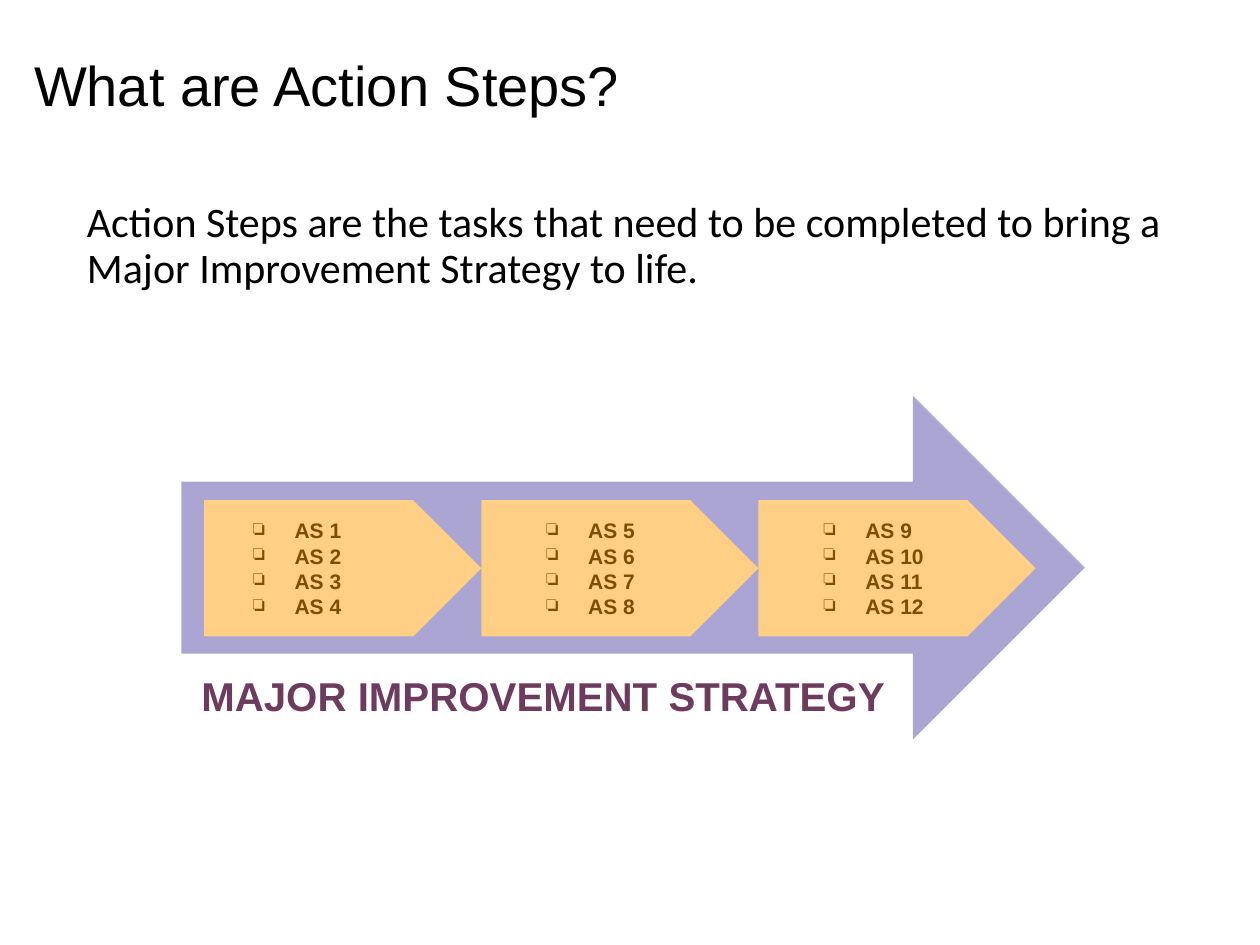
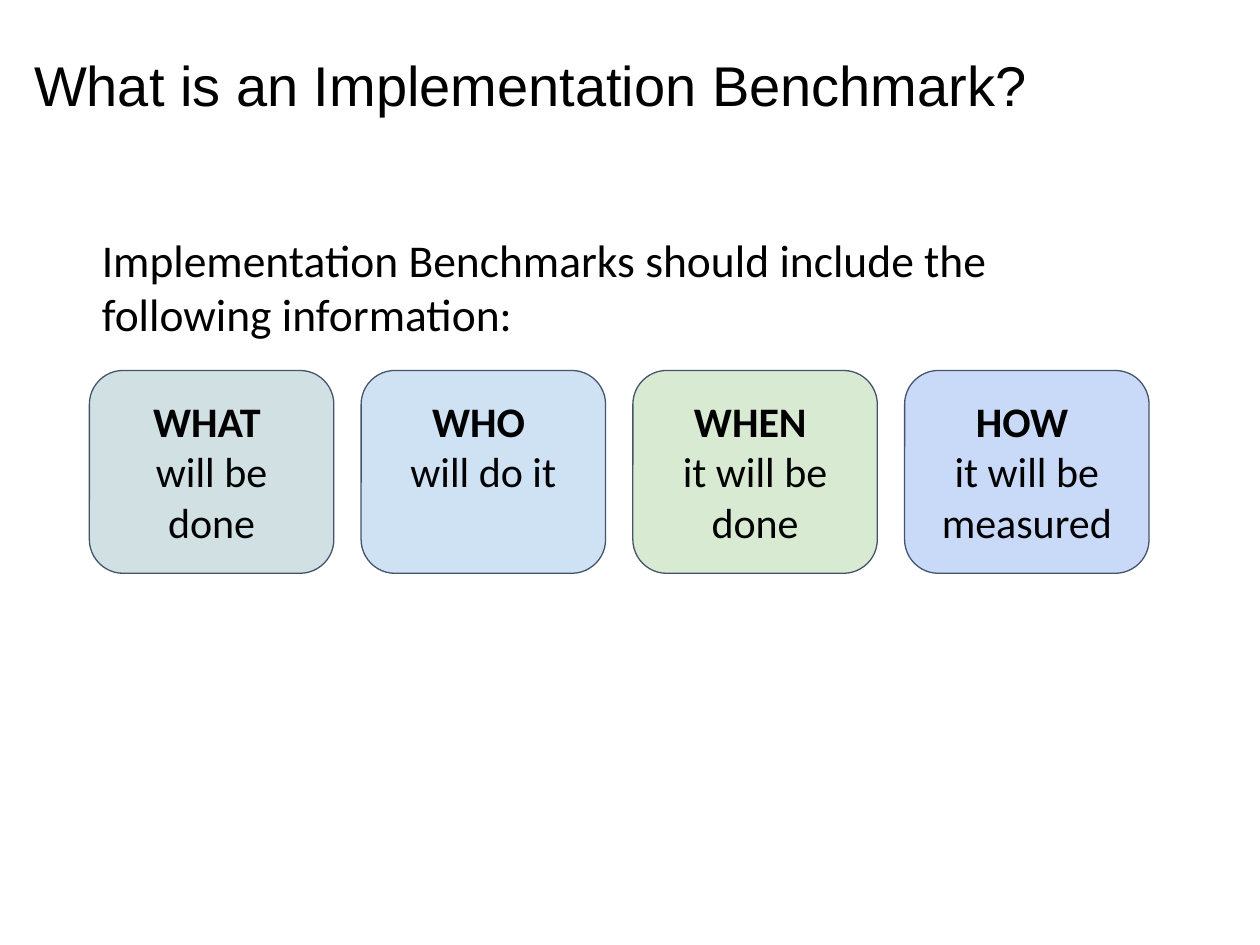
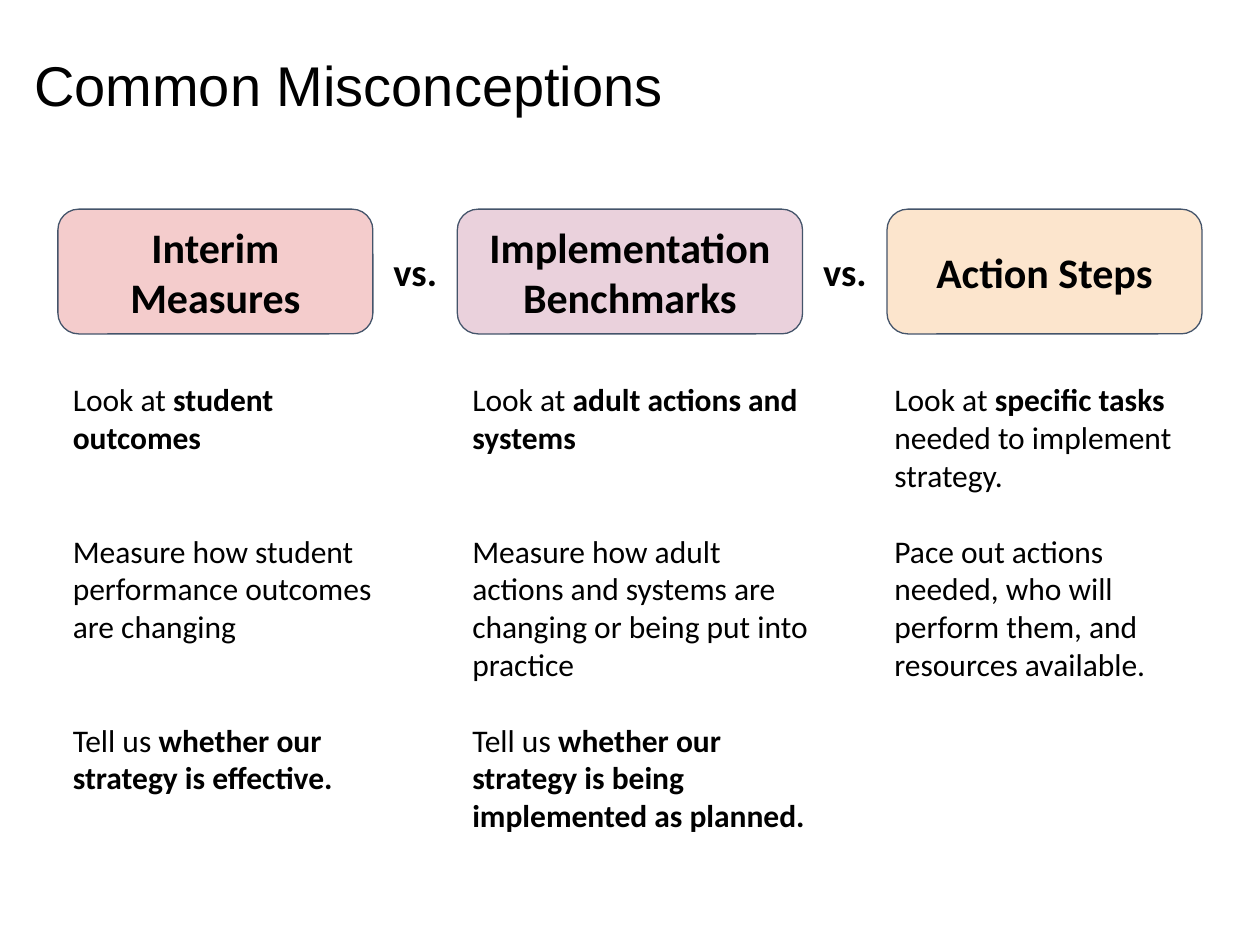
from lxml import etree
from pptx import Presentation
from pptx.dml.color import RGBColor
from pptx.enum import shapes, text
from pptx.oxml.ns import qn
from pptx.util import Inches, Pt

BLACK = "000000"
OUTLINE = "44546A"
ARROW = "AAA5D2"
STEP_FILL = "FECF85"
STEP_TEXT = "7C4D03"
STRATEGY_TEXT = "6D3B5D"
HEADING_FONT, BODY_FONT = "Arial", "Calibri"
TITLE_LAYOUT, TITLE_BODY_LAYOUT = 5, 1
SHAPE = shapes.MSO_SHAPE
ALIGN = text.PP_ALIGN
ANCHOR = text.MSO_ANCHOR


def rgb(color):
    return RGBColor.from_string(color)


def place(sp, left, top, width, height):
    sp.left, sp.top = Inches(left), Inches(top)
    sp.width, sp.height = Inches(width), Inches(height)


def set_margins(tf, margin):
    tf.margin_left = tf.margin_right = Inches(margin)
    tf.margin_top = tf.margin_bottom = Inches(margin)


def write(tf, paragraphs, size, font=BODY_FONT, color=BLACK, bold=False,
          align=ALIGN.LEFT):
    """Fill a frame; **marks** turn bold on and off, newlines break lines."""
    for i, content in enumerate(paragraphs):
        p = tf.paragraphs[0] if i == 0 else tf.add_paragraph()
        p.alignment = align
        for n, line in enumerate(content.split("\n")):
            if n:
                p.add_line_break()
            for k, part in enumerate(line.split("**")):
                if part:
                    r = p.add_run()
                    r.text = part
                    r.font.size, r.font.name = Pt(size), font
                    r.font.bold = bold or k % 2 == 1
                    r.font.color.rgb = rgb(color)


def set_bullet(p, char=None, left=0, indent=0, color=BLACK):
    pPr = p._p.get_or_add_pPr()
    pPr.set("marL", str(Inches(left)))
    pPr.set("indent", str(Inches(indent)))
    if char is None:
        etree.SubElement(pPr, qn("a:buNone"))
        return
    clr = etree.SubElement(pPr, qn("a:buClr"))
    etree.SubElement(clr, qn("a:srgbClr")).set("val", color)
    etree.SubElement(pPr, qn("a:buChar")).set("char", char)


def add_slide(prs, title, width=8.7, layout=TITLE_LAYOUT):
    s = prs.slides.add_slide(prs.slide_layouts[layout])
    sp = s.shapes.title
    place(sp, 0.27, 0.36, width, 0.62)
    tf = sp.text_frame
    set_margins(tf, 0)
    tf.auto_size = text.MSO_AUTO_SIZE.NONE
    tf.vertical_anchor = ANCHOR.MIDDLE
    write(tf, [title], 32, HEADING_FONT)
    return s


def add_text(s, box, paragraphs, size, **style):
    tf = s.shapes.add_textbox(*map(Inches, box)).text_frame
    tf.word_wrap = True
    set_margins(tf, 0.1)
    write(tf, paragraphs, size, **style)
    return tf


def add_block(s, kind, box, fill, line=None):
    sp = s.shapes.add_shape(kind, *map(Inches, box))
    sp.shadow.inherit = False
    sp.fill.solid()
    sp.fill.fore_color.rgb = rgb(fill)
    if line:
        sp.line.color.rgb = rgb(line)
        sp.line.width = Pt(0.75)
    else:
        sp.line.fill.background()
    tf = sp.text_frame
    tf.word_wrap = True
    tf.vertical_anchor = ANCHOR.MIDDLE
    set_margins(tf, 0.1)
    return tf


def add_card(s, box, fill, content, bold=False):
    tf = add_block(s, SHAPE.ROUNDED_RECTANGLE, box, fill, OUTLINE)
    write(tf, [content], 24, bold=bold, align=ALIGN.CENTER)
    return tf


def action_steps(prs):
    s = add_slide(prs, "What are Action Steps?", layout=TITLE_BODY_LAYOUT)
    body = s.placeholders[1]
    place(body, 0.69, 1.6, 8.62, 1.05)
    tf = body.text_frame
    set_margins(tf, 0)
    tf.auto_size = text.MSO_AUTO_SIZE.NONE
    write(tf, ["Action Steps are the tasks that need to be completed to bring "
               "a Major Improvement Strategy to life."], 24)
    p = tf.paragraphs[0]
    set_bullet(p)
    p.line_spacing, p.space_before = 0.9, Pt(0)

    # Strategy arrow holding three groups of steps
    add_block(s, SHAPE.RIGHT_ARROW, (1.44, 3.14, 7.17, 2.73), ARROW)
    add_text(s, (1.39, 5.23, 5.74, 0.59), ["MAJOR IMPROVEMENT STRATEGY"], 23,
             font=HEADING_FONT, color=STRATEGY_TEXT, bold=True,
             align=ALIGN.RIGHT)
    width, per_group = 2.2, 4
    for i, indent in enumerate((0.62, 0.75, 0.75)):
        tf = add_block(s, SHAPE.PENTAGON,
                       (1.62 + i * width, 3.97, width, 1.08), STEP_FILL)
        first = i * per_group + 1
        write(tf, [f"AS {n}" for n in range(first, first + per_group)], 12,
              HEADING_FONT, STEP_TEXT, bold=True)
        for p in tf.paragraphs:
            set_bullet(p, "❏", indent, -0.33, STEP_TEXT)


def implementation_benchmark(prs):
    s = add_slide(prs, "What is an Implementation Benchmark?")
    left, right, width = 0.71, 9.12, 1.94
    add_text(s, (left, 1.74, 8.4, 3.19),
             ["Implementation Benchmarks should include the following "
              "information:"], 26)

    # Question cards, evenly spread
    cards = [("D0E0E3", "**WHAT **\nwill be done"),
             ("CFE2F3", "**WHO **\nwill do it"),
             ("D9EAD3", "**WHEN **\nit will be done"),
             ("C9DAF8", "**HOW **\nit will be measured")]
    pitch = (right - left - width) / (len(cards) - 1)
    for i, (fill, content) in enumerate(cards):
        tf = add_card(s, (left + i * pitch, 2.94, width, 1.61), fill, content)
        tf.vertical_anchor = ANCHOR.TOP
        tf.margin_top = Inches(0.12)


def misconceptions(prs):
    s = add_slide(prs, "Common Misconceptions", width=9.5)

    # Header cards with "vs." centred in the gaps
    headers = [("Interim Measures", "F4CCCC", 2.5),
               ("Implementation Benchmarks", "EAD1DC", 2.74),
               ("Action Steps", "FCE5CD", 2.5)]
    gap, vs_width, left = 0.67, 0.61, 0.46
    for i, (label, fill, width) in enumerate(headers):
        if i:
            add_text(s, (left - (gap + vs_width) / 2, 1.87, vs_width, 0.57),
                     ["vs."], 22, bold=True, align=ALIGN.CENTER)
        add_card(s, (left, 1.66, width, 0.99), fill, label, bold=True)
        left += width + gap

    # Explanations: position, size, paragraphs, lines of space before each
    columns = [
        (0.48, 2.74, 3.54,
         ["Look at **student outcomes**",
          "Measure how student performance outcomes are changing",
          "Tell us **whether our strategy is effective.**"], (0, 2, 2)),
        (3.65, 2.91, 3.84,
         ["Look at **adult actions and systems**",
          "Measure how adult actions and systems are changing or being put "
          "into practice",
          "Tell us **whether our strategy is being implemented as "
          "planned.**"], (0, 2, 1)),
        (7, 2.55, 2.63,
         ["Look at **specific tasks **needed to implement strategy.",
          "Pace out actions needed, who will perform them, and resources "
          "available."], (0, 1)),
    ]
    line_height = 21.6
    for x, width, height, paragraphs, gaps in columns:
        tf = add_text(s, (x, 2.92, width, height), paragraphs, 18)
        for p, lines in zip(tf.paragraphs, gaps):
            p.space_before = Pt(lines * line_height)


def main():
    prs = Presentation()
    prs.slide_width, prs.slide_height = Inches(10), Inches(7.5)
    action_steps(prs)
    implementation_benchmark(prs)
    misconceptions(prs)
    prs.save("out.pptx")


if __name__ == "__main__":
    main()
